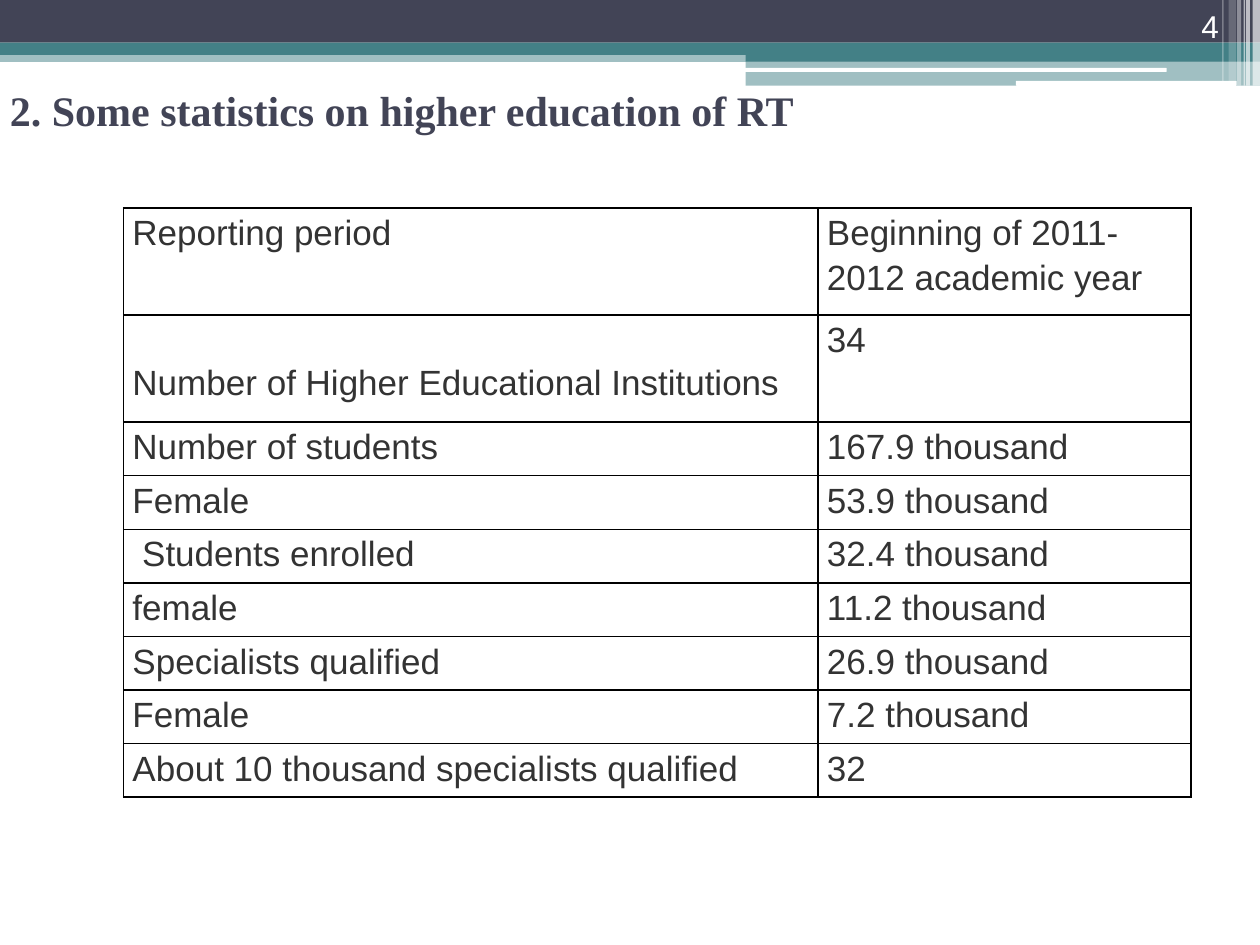
from lxml.etree import SubElement
from pptx import Presentation
from pptx.dml.color import RGBColor
from pptx.enum.shapes import MSO_SHAPE as Preset
from pptx.enum.text import MSO_ANCHOR as Anchor, PP_ALIGN as Align
from pptx.oxml import parse_xml
from pptx.oxml.ns import nsdecls, qn
from pptx.util import Cm, Pt

COLORS = {"navy": "424456", "teal": "438086", "white": "FFFFFF",
          "text": "333333", "border": "000000"}


def style_text(paragraph, font_name, size, color, bold=False):
    font = paragraph.font
    font.name, font.size, font.bold = font_name, Pt(size), bold
    font.color.rgb = RGBColor.from_string(COLORS[color])


def add_border(cell):
    """Draw a 1 pt line on all four sides, placed before the cell's fill."""
    properties = cell._tc.get_or_add_tcPr()
    for index, side in enumerate(("lnL", "lnR", "lnT", "lnB")):
        properties.insert(index, parse_xml(
            f'<a:{side} {nsdecls("a")} w="12700"><a:solidFill>'
            f'<a:srgbClr val="{COLORS["border"]}"/></a:solidFill></a:{side}>'))


presentation = Presentation()
presentation.slide_width, presentation.slide_height = Cm(25.4), Cm(19.05)
slide = presentation.slides.add_slide(presentation.slide_layouts[6])

# Header bands and stripes: left, top, width, height (cm), colour, opacity %, preset
BARS = [
    (0, 1.02, 25.4, 0.23, "teal", 50, Preset.RECTANGLE),
    (0, 0, 25.4, 0.86, "navy", 100, Preset.RECTANGLE),
    (0, 0.86, 25.4, 0.25, "teal", 100, Preset.RECTANGLE),
    (15.03, 0.99, 10.37, 0.25, "teal", 100, Preset.RECTANGLE),
    (15.03, 1.23, 10.37, 0.5, "teal", 50, Preset.RECTANGLE),
    (15.01, 1.37, 8.51, 0.08, "white", 100, Preset.ROUNDED_RECTANGLE),
    (20.48, 1.63, 4.45, 0.1, "white", 100, Preset.ROUNDED_RECTANGLE),
    (25.25, 0, 0.15, 1.73, "white", 65, Preset.RECTANGLE),
    (25.12, 0, 0.08, 1.73, "white", 65, Preset.RECTANGLE),
    (25.07, 0, 0.03, 1.73, "white", 60, Preset.RECTANGLE),
    (24.94, 0, 0.08, 1.73, "white", 40, Preset.RECTANGLE),
    (24.77, 0, 0.15, 1.63, "white", 20, Preset.RECTANGLE),
    (24.64, 0, 0.03, 1.63, "white", 30, Preset.RECTANGLE),
]
for left, top, width, height, color, opacity, preset in BARS:
    shape = slide.shapes.add_shape(preset, Cm(left), Cm(top), Cm(width), Cm(height))
    shape.shadow.inherit = False
    shape.line.fill.background()
    shape.fill.solid()
    shape.fill.fore_color.rgb = RGBColor.from_string(COLORS[color])
    if opacity < 100:
        color_element = shape._element.spPr.find(f'{qn("a:solidFill")}/{qn("a:srgbClr")}')
        SubElement(color_element, qn("a:alpha"), val=str(opacity * 1000))

title = slide.shapes.add_textbox(Cm(-0.05), Cm(1.19), Cm(22.86), Cm(2.97))
title.text_frame.word_wrap = True
title.text_frame.vertical_anchor = Anchor.MIDDLE
title.text_frame.margin_bottom = Cm(1.07)
title.text_frame.text = "2. Some statistics on higher education of RT"
style_text(title.text_frame.paragraphs[0], "Times New Roman", 24, "navy", bold=True)

page_number = slide.shapes.add_textbox(Cm(22.71), Cm(0), Cm(2.11), Cm(1.02))
page_number.text_frame.word_wrap = True
page_number.text_frame.vertical_anchor = Anchor.BOTTOM
page_number.text_frame.text = "4"
page_number.text_frame.paragraphs[0].alignment = Align.RIGHT
style_text(page_number.text_frame.paragraphs[0], "Arial", 18, "white")

STATISTICS = [
    ("Reporting period", "Beginning of 2011-2012 academic year"),
    ("Number of Higher Educational Institutions", "34"),
    ("Number of students", "167.9 thousand"),
    ("Female", "53.9 thousand"),
    (" Students enrolled", "32.4 thousand"),
    ("female", "11.2 thousand"),
    ("Specialists qualified", "26.9 thousand"),
    ("Female", "7.2 thousand"),
    ("About 10 thousand specialists qualified", "32"),
]
table = slide.shapes.add_table(len(STATISTICS), 2, Cm(2.49), Cm(4.19),
                               Cm(21.52), Cm(11.92)).table
table.first_row = table.horz_banding = False
table.columns[0].width, table.columns[1].width = Cm(14), Cm(7.52)
for row_index, values in enumerate(STATISTICS):
    table.rows[row_index].height = Cm(2.16 if row_index < 2 else 1.08)
    for column_index, value in enumerate(values):
        cell = table.cell(row_index, column_index)
        cell.text = value
        cell.margin_left = cell.margin_right = Cm(0.18)
        cell.margin_top = cell.margin_bottom = Cm(0)
        cell.fill.background()
        add_border(cell)
        paragraph = cell.text_frame.paragraphs[0]
        paragraph.line_spacing = 1.15
        style_text(paragraph, "Arial", 20, "text")
table.cell(1, 0).margin_top = Cm(0.86)  # label sits on the second line of its row

presentation.save("out.pptx")
